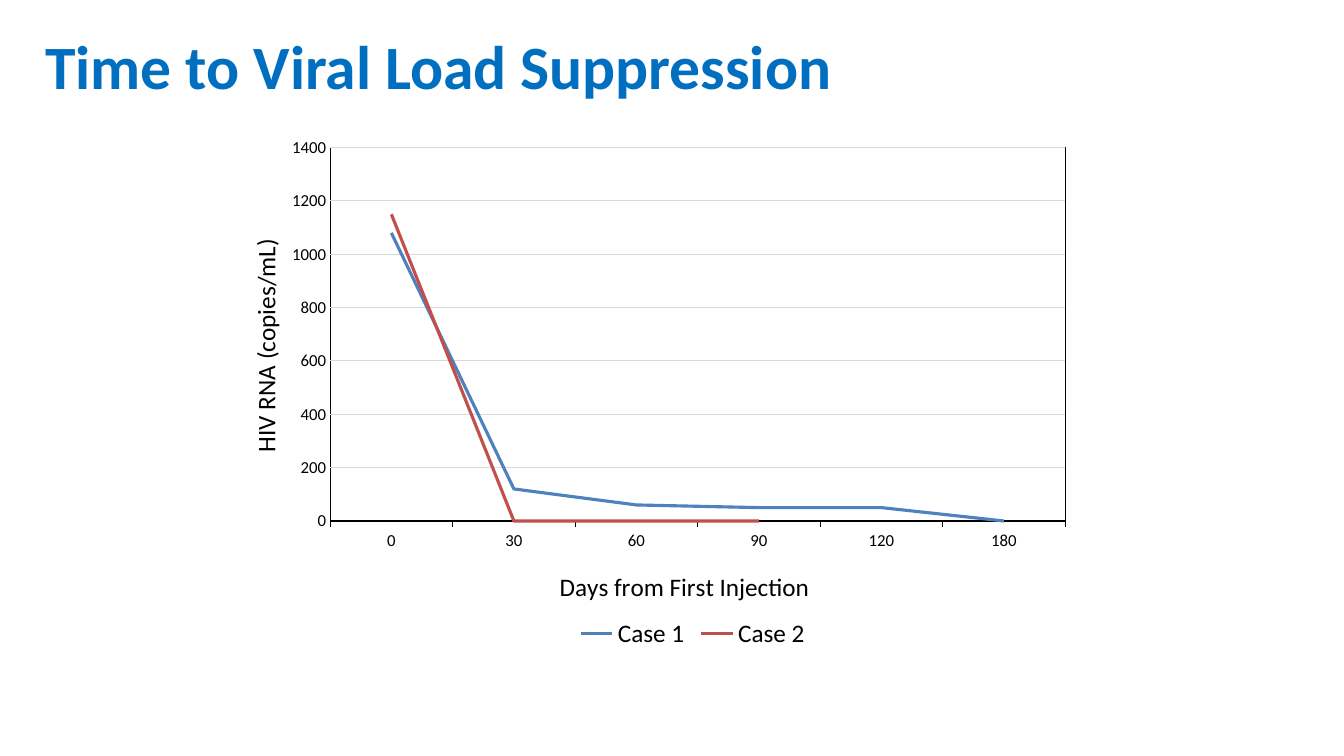
from dataclasses import dataclass

from lxml import etree
from pptx import Presentation
from pptx.chart.data import CategoryChartData
from pptx.dml.color import RGBColor
from pptx.enum.chart import XL_CHART_TYPE, XL_LEGEND_POSITION, XL_TICK_MARK
from pptx.oxml import parse_xml
from pptx.oxml.ns import qn
from pptx.util import Pt

LINE_CHART = XL_CHART_TYPE.LINE
LEGEND_BOTTOM = XL_LEGEND_POSITION.BOTTOM
TICK_OUT, TICK_NONE = XL_TICK_MARK.OUTSIDE, XL_TICK_MARK.NONE


@dataclass(frozen=True)
class Theme:
    font: str = "Calibri"
    heading: str = "006FC0"
    ink: str = "000000"
    grid: str = "D9D9D9"
    cases: tuple = ("4F81BD", "C0504D")
    heading_size: float = 44
    label_size: float = 18
    tick_size: float = 12
    hairline: float = 0.75
    case_line: float = 2.25


THEME = Theme()
DAYS = ("0", "30", "60", "90", "120", "180")
VIRAL_LOADS = {
    "Case 1": (1080, 120, 60, 50, 50, 0),
    "Case 2": (1150, 0, 0, 0, None, None),
}


def style_font(font, size, color=THEME.ink, bold=False):
    font.name = THEME.font
    font.size = Pt(size)
    font.bold = bold
    font.color.rgb = RGBColor.from_string(color)


def style_line(line, color, width):
    line.color.rgb = RGBColor.from_string(color)
    line.width = Pt(width)


def set_layout(parent, index, **fractions):
    for old in parent.findall(qn("c:layout")):
        parent.remove(old)
    layout = etree.Element(qn("c:layout"))
    manual = etree.SubElement(layout, qn("c:manualLayout"))
    if "w" in fractions:
        etree.SubElement(manual, qn("c:layoutTarget"), val="inner")
    for mode in ("xMode", "yMode"):
        etree.SubElement(manual, qn(f"c:{mode}"), val="edge")
    for key, fraction in fractions.items():
        etree.SubElement(manual, qn(f"c:{key}"), val=str(fraction))
    parent.insert(index, layout)


def add_heading(slide, text):
    box = slide.shapes.add_textbox(Pt(32.4), Pt(20.2), Pt(568), Pt(53.3))
    frame = box.text_frame
    frame.word_wrap = True
    frame.margin_left = frame.margin_right = 0
    frame.margin_top = frame.margin_bottom = 0
    run = frame.paragraphs[0].add_run()
    run.text = text
    style_font(run.font, THEME.heading_size, THEME.heading, True)


def style_axis(axis, caption, tick_mark, x, y, rotation):
    axis.major_tick_mark = tick_mark
    axis.minor_tick_mark = TICK_NONE
    style_font(axis.tick_labels.font, THEME.tick_size)
    axis_title = axis.axis_title
    frame = axis_title.text_frame
    run = frame.paragraphs[0].add_run()
    run.text = caption
    style_font(run.font, THEME.label_size)
    body = axis_title._element.find(".//" + qn("a:bodyPr"))
    body.set("rot", str(rotation))
    body.set("vert", "horz")
    set_layout(axis_title._element, 1, x=x, y=y)


def frame_plot(chart):
    plot_area = chart._chartSpace.find(".//" + qn("c:plotArea"))
    set_layout(plot_area, 0, x=0.13, y=0.04, w=0.85, h=0.69)
    plot_area.append(parse_xml(
        '<c:spPr xmlns:c="http://schemas.openxmlformats.org/drawingml/2006/chart"'
        ' xmlns:a="http://schemas.openxmlformats.org/drawingml/2006/main">'
        f'<a:noFill/><a:ln w="{Pt(THEME.hairline)}"><a:solidFill>'
        f'<a:srgbClr val="{THEME.ink}"/></a:solidFill></a:ln></c:spPr>'))


def add_viral_load_chart(slide):
    data = CategoryChartData()
    data.categories = DAYS
    for case, loads in VIRAL_LOADS.items():
        data.add_series(case, loads)
    chart = slide.shapes.add_chart(
        LINE_CHART, Pt(155.5), Pt(90), Pt(617.8), Pt(386.6), data).chart
    chart.has_title = False
    style_font(chart.font, THEME.tick_size)
    chart.plots[0].vary_by_categories = False
    for case, color in zip(chart.plots[0].series, THEME.cases):
        case.smooth = False
        style_line(case.format.line, color, THEME.case_line)

    days = chart.category_axis
    style_axis(days, "Days from First Injection", TICK_OUT, 0.39, 0.81, 0)
    style_line(days.format.line, THEME.ink, THEME.hairline)

    copies = chart.value_axis
    style_axis(copies, "HIV RNA (copies/mL)", TICK_NONE, 0.03, 0.2, -5400000)
    copies.minimum_scale, copies.maximum_scale, copies.major_unit = 0, 1400, 200
    copies.format.line.fill.background()
    style_line(copies.major_gridlines.format.line, THEME.grid, THEME.hairline)

    chart.has_legend = True
    legend = chart.legend
    legend.position = LEGEND_BOTTOM
    legend.include_in_layout = False
    style_font(legend.font, THEME.label_size)
    set_layout(legend._element, 1, x=0.41, y=0.9)
    frame_plot(chart)


def main():
    deck = Presentation()
    deck.slide_width, deck.slide_height = Pt(960), Pt(540)
    slide = deck.slides.add_slide(deck.slide_layouts[6])
    add_heading(slide, "Time to Viral Load Suppression")
    add_viral_load_chart(slide)
    deck.save("out.pptx")


if __name__ == "__main__":
    main()
